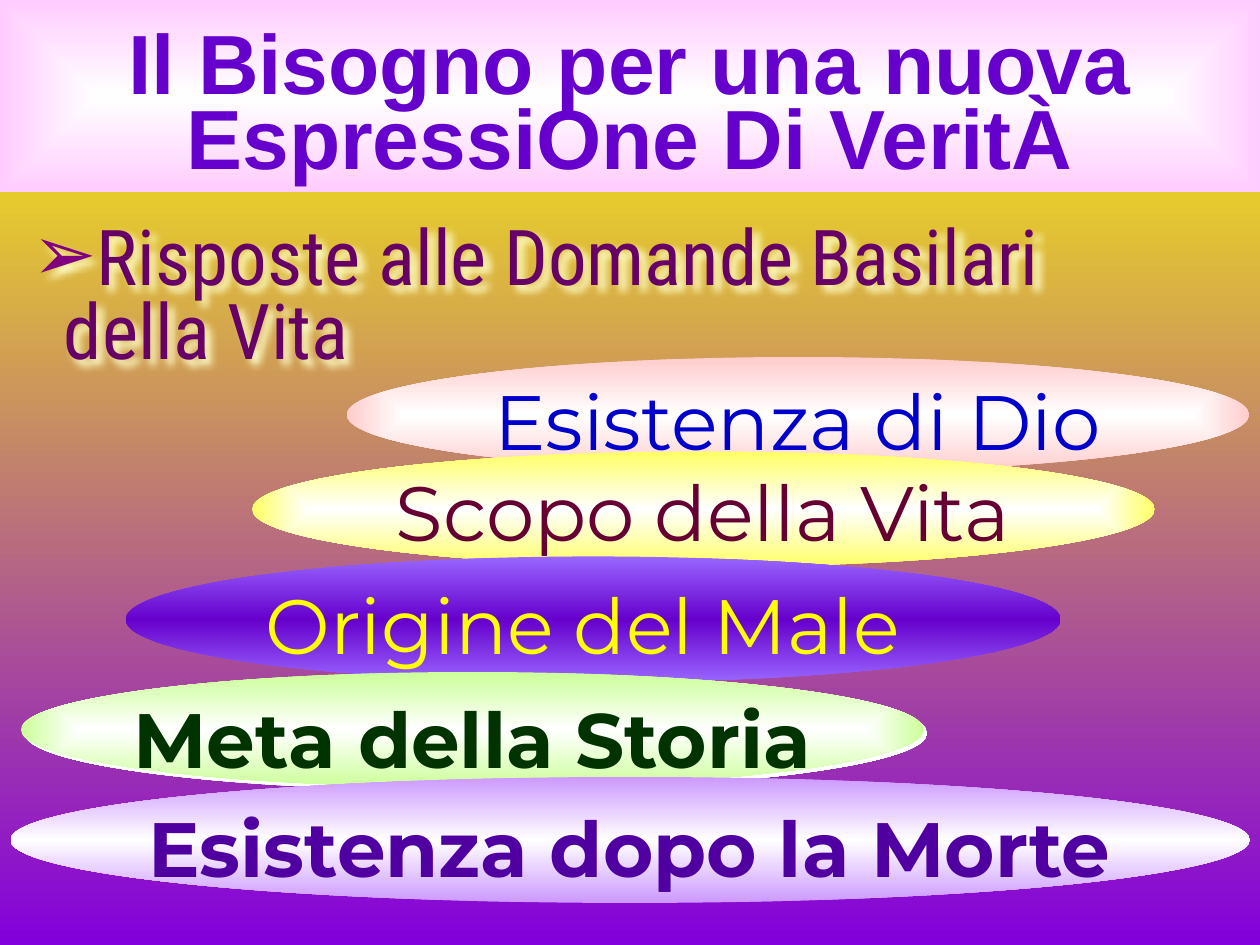
"""Build the slide on basic questions of life: title, lead line and five ellipses."""
from lxml.etree import SubElement
from pptx import Presentation
from pptx.dml.color import RGBColor
from pptx.enum.shapes import MSO_SHAPE
from pptx.enum.text import MSO_ANCHOR, PP_ALIGN
from pptx.oxml.ns import qn
from pptx.util import Inches, Pt

HUES = {
    "white": "FFFFFF", "black": "000000", "yellow": "FFFF00", "purple": "8300DC",
    "pink": "FFCCCC", "lemon": "FFFF66", "violet": "9966FF", "deep": "6600CC",
    "lime": "CCFF99", "lilac": "CC99FF", "rose": "FFCCFF", "blue": "0000CC",
    "wine": "660033", "green": "003300", "indigo": "5000A0", "plum": "660066",
    "bullet": "800080", "cream": "FFFFCC",
}

deck = Presentation()
deck.slide_width, deck.slide_height = Inches(10), Inches(7.5)
UNIT = deck.slide_width / 120
slide = deck.slides.add_slide(deck.slide_layouts[6])


def add(node, tag, **attrs):
    return SubElement(node, qn("a:" + tag), {key: str(val) for key, val in attrs.items()})


def shade(owner, fill, hues, round_=False):
    fill.gradient()
    grad = owner._element.xpath(".//a:gradFill")[0]
    for child in list(grad):
        grad.remove(child)
    stops = add(grad, "gsLst")
    for step, hue in enumerate(hues):
        stop = add(stops, "gs", pos=step * 100000 // (len(hues) - 1))
        add(stop, "srgbClr", val=HUES[hue])
    if round_:
        ring = add(grad, "path", path="shape")
        add(ring, "fillToRect", l=50000, t=50000, r=50000, b=50000)
    else:
        add(grad, "lin", ang=5400000, scaled=1)


shade(slide, slide.background.fill, ["yellow", "purple"])

OVAL, RECT = MSO_SHAPE.OVAL, MSO_SHAPE.RECTANGLE
BASE = {"name": "Montserrat", "size": Pt(44), "bold": False}
BOLD = BASE | {"bold": True}
HEAD = {"name": "Arial", "size": Pt(48), "bold": True}
LEAD = BASE | {"name": "Roboto Condensed"}

items = [
    (OVAL, (33, 34, 86, 11), ["white", "pink"], True, "Esistenza di Dio", "blue", BASE, 1.1, 0.05),
    (OVAL, (24, 43, 86, 11), ["white", "lemon"], True, "Scopo della Vita", "wine", BASE, 1, 0.08),
    (OVAL, (12, 53, 89, 12), ["violet", "deep", "violet"], False, "Origine del Male ", "yellow", BASE, 1.1, 0.05),
    (OVAL, (2, 64, 86, 11), ["white", "lime"], True, "Meta della Storia", "green", BOLD, 1.15, 0.07),
    (None, (1.9, 21, 103.1, 15.2), [], False, "Risposte alle Domande Basilari della Vita", "plum", LEAD, 0.8, 0.05),
    (RECT, (0, 0, 120, 18.3), ["white", "rose"], True, "Il Bisogno per una nuova EspressiOne Di VeritÀ", "deep", HEAD, 0.75, 0.26),
    (OVAL, (1, 74, 118, 12), ["lilac", "white", "lilac"], False, "Esistenza dopo la Morte", "indigo", BOLD, 1.15, 0.05),
]

for kind, cells, hues, round_, words, ink, style, gap, inset in items:
    spot = [round(cell * UNIT) for cell in cells]
    if kind is None:
        shape = slide.shapes.add_textbox(*spot)
    else:
        shape = slide.shapes.add_shape(kind, *spot)
        shape.shadow.inherit = False
        shape.line.fill.background()
        shade(shape, shape.fill, hues, round_)
    frame = shape.text_frame
    frame.word_wrap = kind != OVAL
    frame.vertical_anchor = MSO_ANCHOR.MIDDLE
    frame.margin_top = Inches(inset)
    line = frame.paragraphs[0]
    line.line_spacing = gap
    line.alignment = PP_ALIGN.LEFT if kind is None else PP_ALIGN.CENTER
    run = line.add_run()
    run.text = words
    for key, val in style.items():
        setattr(run.font, key, val)
    run.font.color.rgb = RGBColor.from_string(HUES[ink])

    glow = None
    if kind is None:
        props = line._p.get_or_add_pPr()
        props.set("marL", str(Inches(0.25)))
        props.set("indent", str(-Inches(0.25)))
        add(add(props, "buClr"), "srgbClr", val=HUES["bullet"])
        add(props, "buFont", typeface="Arial")
        add(props, "buChar", char="➢")
        shape.shadow.inherit = False
        glow = "cream", Pt(4), Pt(4)
    else:
        edge = add(run.font._element, "ln", w=Pt(0.25))
        add(add(edge, "solidFill"), "srgbClr", val=HUES["black"])
        run.font._element.insert(0, edge)
    if ink == "green":
        glow = "white", 0, Pt(2.8)
    if glow:
        hue, blur, dist = glow
        effect = shape._element.spPr.find(qn("a:effectLst"))
        cast = add(effect, "outerShdw", blurRad=blur, dist=dist, dir=2700000, algn="ctr", rotWithShape=0)
        add(cast, "srgbClr", val=HUES[hue])

deck.save("out.pptx")
